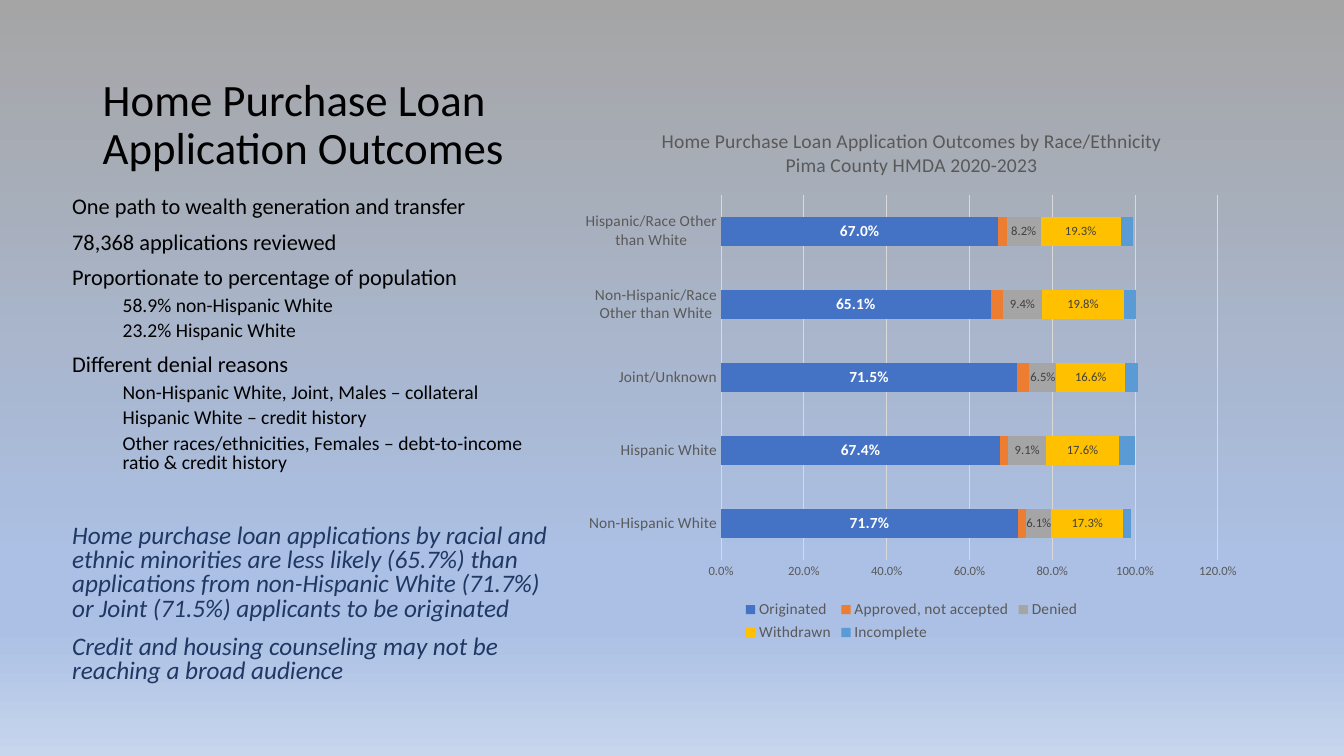
from lxml.etree import SubElement
from pptx import Presentation
from pptx.chart.data import CategoryChartData
from pptx.dml.color import RGBColor
from pptx.enum.chart import XL_CHART_TYPE, XL_LABEL_POSITION, XL_LEGEND_POSITION, XL_TICK_MARK
from pptx.enum.text import MSO_ANCHOR
from pptx.oxml import parse_xml
from pptx.oxml.ns import nsdecls, qn
from pptx.util import Cm, Pt

FONT = "Calibri"
GREY = "595959"
PALE = "D9D9D9"
STOPS = [(0, "A5A5A5"), (74, "ABC0E4"), (83, "ABC0E4"), (100, "C7D5ED")]
MAIN = {"size": 16, "color": "000000", "before": 10}
SUB = {"size": 14, "color": "000000", "before": 5, "level": 1}
NOTE = {"size": 18, "color": "203864", "before": 10, "italic": True}
LINES = [
    ("One path to wealth generation and transfer", MAIN),
    ("78,368 applications reviewed", MAIN),
    ("Proportionate to percentage of population", MAIN),
    ("58.9% non-Hispanic White", SUB),
    ("23.2% Hispanic White", SUB),
    ("Different denial reasons", MAIN),
    ("Non-Hispanic White, Joint, Males – collateral", SUB),
    ("Hispanic White – credit history", SUB),
    ("Other races/ethnicities, Females – debt-to-income ratio & credit history", SUB),
    ("Home purchase loan applications by racial and ethnic minorities are less likely (65.7%) "
     "than applications from non-Hispanic White (71.7%) or Joint (71.5%) applicants to be "
     "originated", NOTE | {"before": 37}),
    ("Credit and housing counseling may not be reaching a broad audience", NOTE),
]
HEADS = ["Home Purchase Loan Application Outcomes by Race/Ethnicity",
         "Pima County HMDA 2020-2023"]
GROUPS = ["Non-Hispanic White", "Hispanic White", "Joint/Unknown",
          "Non-Hispanic/Race Other than White", "Hispanic/Race Other than White"]
BOLD = {"size": 11, "color": "FFFFFF", "bold": True}
DARK = {"size": 9, "color": "404040"}
SERIES = [
    ("Originated", "4472C4", [0.717, 0.674, 0.715, 0.651, 0.67], BOLD),
    ("Approved, not accepted", "ED7D31", [0.02, 0.02, 0.03, 0.03, 0.02], None),
    ("Denied", "A5A5A5", [0.061, 0.091, 0.065, 0.094, 0.082], DARK),
    ("Withdrawn", "FFC000", [0.173, 0.176, 0.166, 0.198, 0.193], DARK),
    ("Incomplete", "5B9BD5", [0.02, 0.04, 0.03, 0.03, 0.03], None),
]
PLOT = {"x": 0.22, "y": 0.16, "w": 0.73, "h": 0.68}


def tint(code):
    """Turn a hex string into a colour."""
    return RGBColor.from_string(code)


def style(font, size, color, **flags):
    """Give a font its face, size, colour and flags."""
    font.color.rgb = tint(color)
    for name, value in ({"name": FONT, "size": Pt(size)} | flags).items():
        setattr(font, name, value)


def rule(line, color):
    """Give a chart line its colour and width."""
    line.color.rgb = tint(color)
    line.width = Pt(0.75)


def paint(slide):
    """Fill the background with a downward gradient."""
    fill = slide.background.fill
    fill.gradient()
    fill.gradient_angle = 270
    stops = slide.background._cSld.find(".//" + qn("a:gsLst"))
    for stop in list(stops):
        stops.remove(stop)
    for place, color in STOPS:
        stop = SubElement(stops, qn("a:gs"), pos=str(place * 1000))
        SubElement(stop, qn("a:srgbClr"), val=color)


def write(slide, box, lines, space, anchor):
    """Fill a text box with styled paragraphs."""
    frame = slide.shapes.add_textbox(*box).text_frame
    frame.word_wrap = True
    frame.vertical_anchor = anchor
    for i, (text, look) in enumerate(lines):
        para = frame.paragraphs[0] if i == 0 else frame.add_paragraph()
        look = dict(look)
        para.line_spacing = space
        para.space_before = Pt(look.pop("before", 0))
        para.level = look.pop("level", 0)
        para._p.get_or_add_pPr().set("marL", str(Cm(1.27) * para.level))
        run = para.add_run()
        run.text = text
        style(run.font, **look)


def place(chart):
    """Set the inner plot area as fractions of the chart."""
    area = chart._chartSpace.find(".//" + qn("c:plotArea"))
    for old in area.findall(qn("c:layout")):
        area.remove(old)
    layout = parse_xml(f"<c:layout {nsdecls('c')}/>")
    area.insert(0, layout)
    manual = SubElement(layout, qn("c:manualLayout"))
    modes = {"layoutTarget": "inner", "xMode": "edge", "yMode": "edge"}
    for name, value in (modes | PLOT).items():
        SubElement(manual, qn("c:" + name), val=str(value))


def axes(chart):
    """Format both axes and the grid."""
    cat, val = chart.category_axis, chart.value_axis
    for axis, size in ((cat, 11), (val, 9)):
        axis.major_tick_mark = axis.minor_tick_mark = XL_TICK_MARK.NONE
        style(axis.tick_labels.font, size, GREY)
    rule(cat.format.line, PALE)
    val.format.line.fill.background()
    rule(val.major_gridlines.format.line, PALE)
    for name, value in {"minimum_scale": 0, "maximum_scale": 1.2, "major_unit": 0.2}.items():
        setattr(val, name, value)
    val.tick_labels.number_format = "0.0%"
    val.tick_labels.number_format_is_linked = False


def bars(slide, box):
    """Draw the stacked bars of loan outcomes."""
    data = CategoryChartData(number_format="0.0%")
    data.categories = GROUPS
    for name, _, values, _ in SERIES:
        data.add_series(name, values)
    chart = slide.shapes.add_chart(XL_CHART_TYPE.BAR_STACKED, *box, data).chart
    style(chart.font, 10, "000000")
    chart.has_title = True
    frame = chart.chart_title.text_frame
    for i, text in enumerate(HEADS):
        para = frame.paragraphs[0] if i == 0 else frame.add_paragraph()
        run = para.add_run()
        run.text = text
        style(run.font, 14, GREY, bold=False)
    chart.chart_title.include_in_layout = False
    chart.has_legend = True
    chart.legend.position = XL_LEGEND_POSITION.BOTTOM
    chart.legend.include_in_layout = False
    style(chart.legend.font, 11, GREY)
    axes(chart)
    place(chart)
    plot = chart.plots[0]
    for name, value in {"gap_width": 150, "overlap": 100, "vary_by_categories": False}.items():
        setattr(plot, name, value)
    for series, (_, color, _, look) in zip(plot.series, SERIES):
        series.format.fill.solid()
        series.format.fill.fore_color.rgb = tint(color)
        if look:
            labels = series.data_labels
            form = {"show_value": True, "number_format": "0.0%",
                    "number_format_is_linked": False, "position": XL_LABEL_POSITION.CENTER}
            for name, value in form.items():
                setattr(labels, name, value)
            style(labels.font, **look)


def main():
    """Build and save the slide."""
    deck = Presentation()
    deck.slide_width, deck.slide_height = Cm(33.87), Cm(19.05)
    slide = deck.slides.add_slide(deck.slide_layouts[6])
    paint(slide)
    head = [("Home Purchase Loan Application Outcomes", {"size": 32, "color": "000000"})]
    write(slide, (Cm(2.34), Cm(1.27), Cm(10.92), Cm(3.25)), head, 0.9, MSO_ANCHOR.BOTTOM)
    write(slide, (Cm(1.57), Cm(4.85), Cm(12.55), Cm(12.7)), LINES, 0.8, MSO_ANCHOR.TOP)
    bars(slide, (Cm(14.4), Cm(2.74), Cm(17.15), Cm(13.54)))
    deck.save("out.pptx")


if __name__ == "__main__":
    main()
